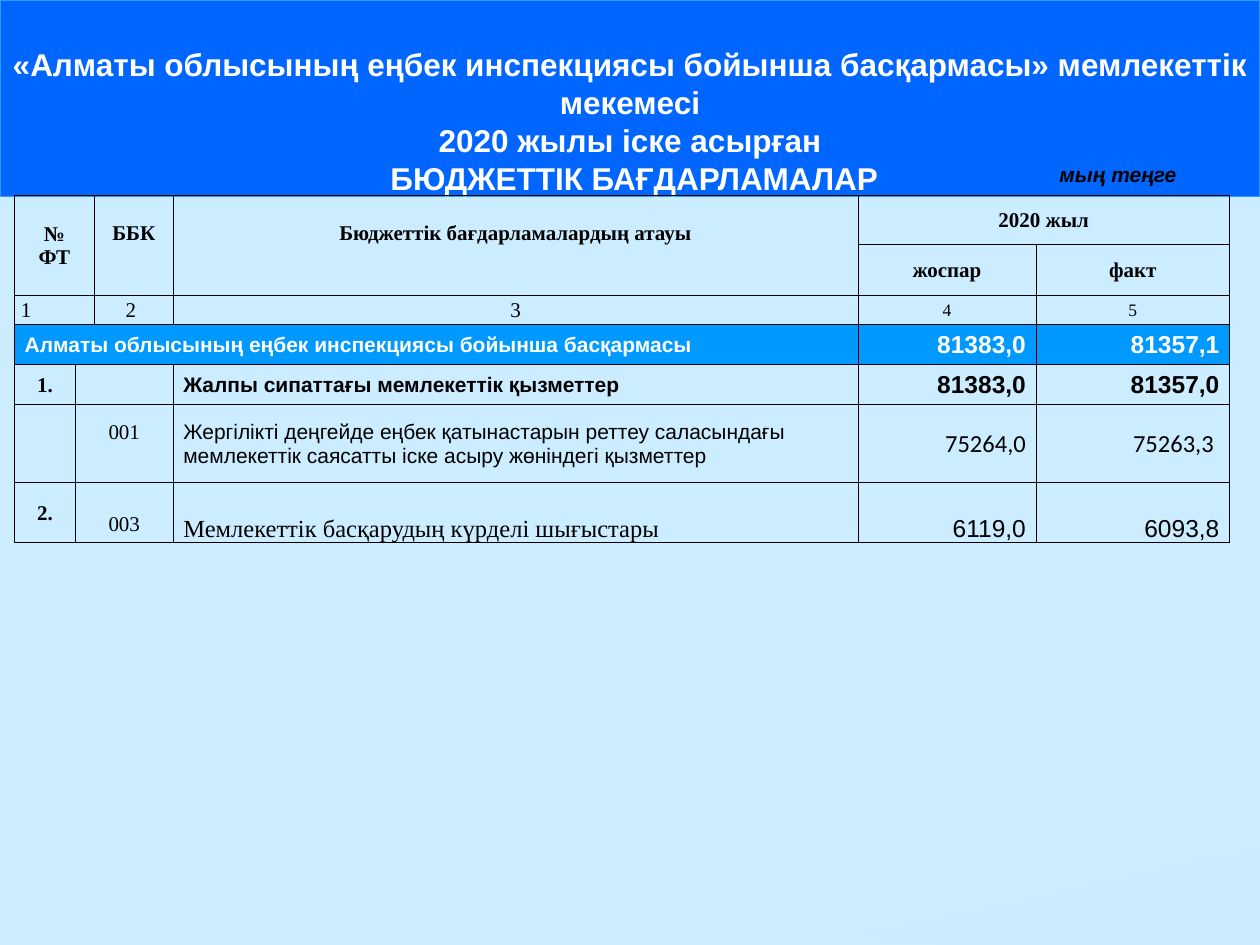
from pptx import Presentation
from pptx.dml.color import RGBColor
from pptx.enum.text import MSO_ANCHOR as Anchor, MSO_AUTO_SIZE as AutoSize, PP_ALIGN as Align
from pptx.oxml.ns import qn
from pptx.util import Pt
from lxml.etree import SubElement

COLORS = {"page": "CCECFF", "banner": "0066FF", "edge": "3399FF", "total": "0099FF",
          "wave": "C6E7FC", "dark": "000000", "light": "FFFFFF"}
TITLE = ["«Алматы облысының еңбек инспекциясы бойынша басқармасы» мемлекеттік мекемесі",
         "2020 жылы іске асырған", " БЮДЖЕТТІК БАҒДАРЛАМАЛАР"]
UNIT = "мың теңге"
COLUMNS = [34.8, 10.9, 45, 391.3, 101.8, 110.6]
ROWS = [28, 29, 16.5, 23, 23, 44.5, 34.3]
WAVE = [(720, 486.7), (680.4, 493.9), (637.2, 504), (559.4, 522), (509, 531.4),
        (493.2, 534.2), (514.8, 537.1), (540, 540), (720, 540)]

SERIF, SANS, HUMAN = "Times New Roman", "Arial", "Calibri"
# font, size, bold, alignment, side margin
STYLES = {
    "head": (SERIF, 12, True, Align.CENTER, 0.7),
    "index": (SERIF, 12, False, Align.CENTER, 0.7),
    "small index": (SERIF, 10, False, Align.CENTER, 0.7),
    "group": (SANS, 12, True, Align.LEFT, 5.8),
    "program": (SANS, 12, False, Align.LEFT, 5.8),
    "capital": (SERIF, 14, False, Align.LEFT, 5.8),
    "sum": (SANS, 14, True, Align.RIGHT, 5.8),
    "amount": (SANS, 14, False, Align.RIGHT, 5.8),
    "plain amount": (HUMAN, 14, False, Align.RIGHT, 5.8),
}
TOTAL_ROW, LAST_ROW = 3, 6
# row, column, row span, column span, text, style, margin changes
CELLS = [
    (0, 0, 2, 2, "№\nФТ", "head", {}),
    (0, 2, 2, 1, "ББК", "head", {"margin_bottom": 14}),
    (0, 3, 2, 1, "Бюджеттік бағдарламалардың атауы", "head", {"margin_bottom": 14}),
    (0, 4, 1, 2, "2020 жыл", "head", {}),
    (1, 4, 1, 1, "жоспар", "head", {}),
    (1, 5, 1, 1, "факт", "head", {}),
    (2, 0, 1, 2, "1", "index", {"align": Align.LEFT, "margin_left": 3.7}),
    (2, 2, 1, 1, "2", "index", {"margin_right": 4}),
    (2, 3, 1, 1, "3", "index", {}),
    (2, 4, 1, 1, "4", "small index", {}),
    (2, 5, 1, 1, "5", "small index", {}),
    (3, 0, 1, 4, "Алматы облысының еңбек инспекциясы бойынша басқармасы", "group", {}),
    (3, 4, 1, 1, "81383,0", "sum", {}),
    (3, 5, 1, 1, "81357,1", "sum", {}),
    (4, 0, 1, 1, "1.", "head", {}),
    (4, 1, 1, 2, "", "index", {}),
    (4, 3, 1, 1, "Жалпы сипаттағы мемлекеттік қызметтер", "group", {}),
    (4, 4, 1, 1, "81383,0", "sum", {}),
    (4, 5, 1, 1, "81357,0", "sum", {}),
    (5, 0, 1, 1, "", "index", {}),
    (5, 1, 1, 2, "001", "index", {"margin_bottom": 14}),
    (5, 3, 1, 1, "Жергілікті деңгейде еңбек қатынастарын реттеу саласындағы "
                 "мемлекеттік саясатты іске асыру жөніндегі қызметтер", "program", {}),
    (5, 4, 1, 1, "75264,0", "plain amount", {}),
    (5, 5, 1, 1, "75263,3", "plain amount", {"margin_right": 9}),
    (6, 0, 1, 1, "2.", "head", {}),
    (6, 1, 1, 2, "003", "index", {"margin_top": 14}),
    (6, 3, 1, 1, "Мемлекеттік басқарудың күрделі шығыстары", "capital", {}),
    (6, 4, 1, 1, "6119,0", "amount", {}),
    (6, 5, 1, 1, "6093,8", "amount", {}),
]


def rgb(name):
    return RGBColor.from_string(COLORS[name])


def paint(fill, name):
    fill.solid()
    fill.fore_color.rgb = rgb(name)


def style_text(frame, font, size, bold, align, color, italic=False):
    for paragraph in frame.paragraphs:
        paragraph.alignment = align
        paragraph.font.name, paragraph.font.size = font, Pt(size)
        paragraph.font.bold, paragraph.font.italic = bold, italic
        paragraph.font.color.rgb = rgb(color)


def add_borders(cell):
    properties = cell._tc.get_or_add_tcPr()
    for side in ("lnL", "lnR", "lnT", "lnB"):
        line = SubElement(properties, qn(f"a:{side}"), w=str(Pt(0.5)))
        fill = SubElement(line, qn("a:solidFill"))
        SubElement(fill, qn("a:srgbClr"), val=COLORS["dark"])


def add_wave(slide):
    builder = slide.shapes.build_freeform(*WAVE[0], scale=Pt(1))
    builder.add_line_segments(WAVE[1:])
    wave = builder.convert_to_shape()
    wave.shadow.inherit = False
    paint(wave.fill, "wave")
    wave.line.fill.background()
    color = wave._element.spPr.find(qn("a:solidFill")).find(qn("a:srgbClr"))
    SubElement(color, qn("a:alpha"), val="30000")


def add_title(slide):
    title = slide.shapes.title
    title.left, title.top, title.width, title.height = Pt(0), Pt(0), Pt(720), Pt(112.3)
    paint(title.fill, "banner")
    title.line.color.rgb, title.line.width = rgb("edge"), Pt(0.75)
    frame = title.text_frame
    frame.text = "\n".join(TITLE)
    frame.auto_size, frame.vertical_anchor = AutoSize.NONE, Anchor.MIDDLE
    frame.margin_left = frame.margin_right = Pt(3.6)
    frame.margin_top, frame.margin_bottom = Pt(26), Pt(0)
    style_text(frame, SANS, 18, True, Align.CENTER, "light")


def add_budget(slide):
    budget = slide.shapes.add_table(len(ROWS), len(COLUMNS), Pt(8.3), Pt(111.8),
                                    Pt(sum(COLUMNS)), Pt(sum(ROWS))).table
    budget.first_row = budget.horz_banding = False
    for column, width in zip(budget.columns, COLUMNS):
        column.width = Pt(width)
    for row, height in zip(budget.rows, ROWS):
        row.height = Pt(height)
    for cell in budget.iter_cells():
        add_borders(cell)
        cell.fill.background()
    for row, column, down, across, text, style, changes in CELLS:
        cell = budget.cell(row, column)
        if down * across > 1:
            cell.merge(budget.cell(row + down - 1, column + across - 1))
        font, size, bold, align, side = STYLES[style]
        margins = {"margin_left": side, "margin_right": side,
                   "margin_top": 0.7, "margin_bottom": 0} | changes
        align = margins.pop("align", align)
        for margin, value in margins.items():
            setattr(cell, margin, Pt(value))
        at_bottom = row == LAST_ROW and column >= 3
        cell.vertical_anchor = Anchor.BOTTOM if at_bottom else Anchor.MIDDLE
        cell.text = text
        total = row == TOTAL_ROW
        if total:
            paint(cell.fill, "total")
        style_text(cell.text_frame, font, size, bold, align, "light" if total else "dark")


def add_unit(slide):
    frame = slide.shapes.add_textbox(Pt(598.3), Pt(88.6), Pt(102.2), Pt(21.6)).text_frame
    frame.word_wrap = True
    frame.text = UNIT
    style_text(frame, SANS, 12, True, Align.LEFT, "dark", italic=True)


def main():
    """Build the budget programme slide."""
    deck = Presentation()
    deck.slide_width, deck.slide_height = Pt(720), Pt(540)
    slide = deck.slides.add_slide(deck.slide_layouts[5])
    paint(slide.background.fill, "page")
    add_wave(slide)
    add_title(slide)
    add_budget(slide)
    add_unit(slide)
    deck.save("out.pptx")


if __name__ == "__main__":
    main()
